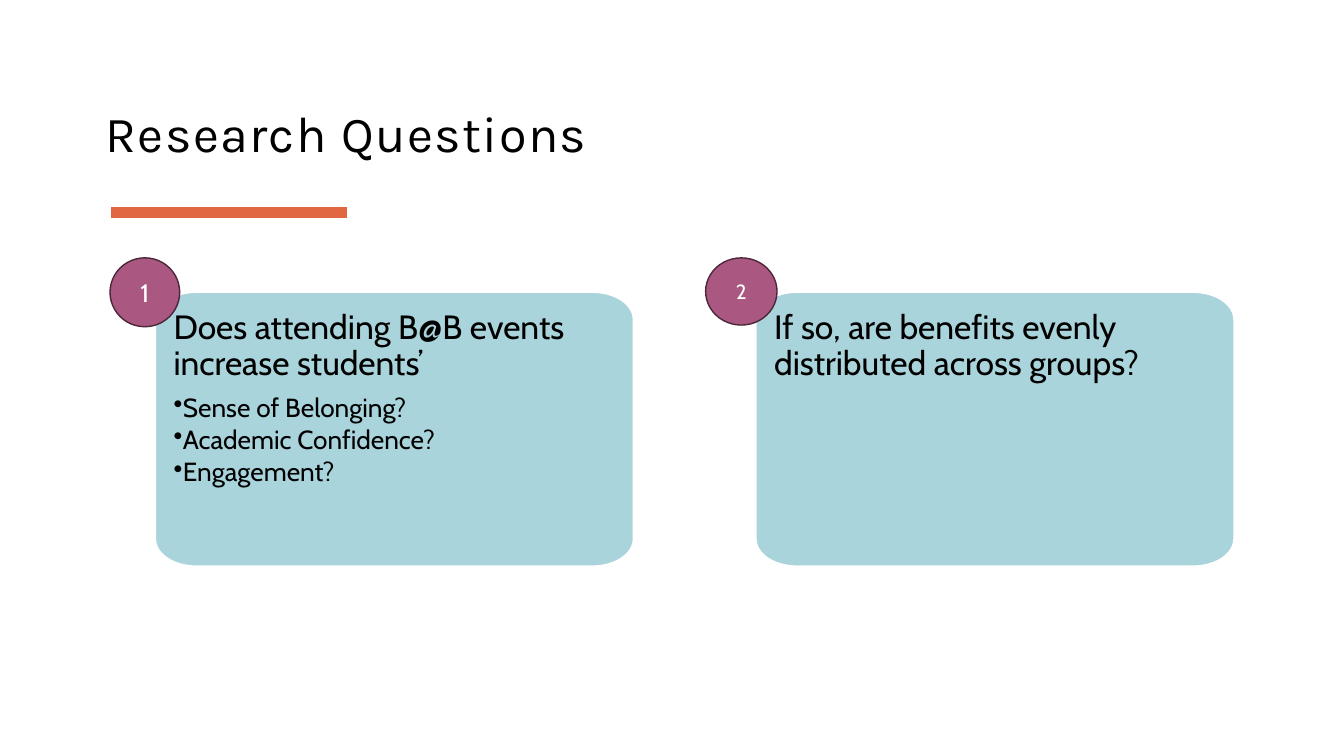
from dataclasses import dataclass
from math import cos, pi, sin

from lxml import etree
from pptx import Presentation
from pptx.dml.color import RGBColor
from pptx.enum.shapes import MSO_SHAPE
from pptx.enum.text import MSO_ANCHOR, MSO_AUTO_SIZE, PP_ALIGN
from pptx.oxml.ns import qn
from pptx.util import Inches, Pt

RECT, OVAL = MSO_SHAPE.RECTANGLE, MSO_SHAPE.OVAL
TOP, MIDDLE, BOTTOM = MSO_ANCHOR.TOP, MSO_ANCHOR.MIDDLE, MSO_ANCHOR.BOTTOM
LEFT, CENTER = PP_ALIGN.LEFT, PP_ALIGN.CENTER
FIXED = MSO_AUTO_SIZE.NONE
COLS, ROWS = 160, 90


@dataclass(frozen=True)
class Theme:
    head: str = "Karla"
    body: str = "Cabin"
    ink: str = "000000"
    paper: str = "FFFFFF"
    card: str = "A9D4DB"
    bar: str = "E06742"
    badge: str = "AA5881"
    rim: str = "4B2739"
    title: float = 36
    lead: float = 24
    item: float = 18.7


class Board:
    """Draws themed elements on one slide, placed by grid columns and rows."""

    def __init__(self, deck, theme):
        self.theme = theme
        self.wide, self.high = deck.slide_width, deck.slide_height
        self.slide = deck.slides.add_slide(deck.slide_layouts[5])

    def place(self, col, row):
        return round(col * self.wide / COLS), round(row * self.high / ROWS)

    def paint(self, shape, fill, line):
        shape.shadow.inherit = False
        shape.fill.solid()
        shape.fill.fore_color.rgb = RGBColor.from_string(fill)
        shape.line.color.rgb = RGBColor.from_string(line)
        shape.line.width = Pt(1)

    def frame(self, shape, anchor, inset=None):
        frame = shape.text_frame
        frame.word_wrap = True
        frame.auto_size = FIXED
        frame.vertical_anchor = anchor
        if inset is not None:
            frame.margin_left = frame.margin_right = Inches(inset)
            frame.margin_top = frame.margin_bottom = Inches(inset)
        return frame

    def label(self, para, text, size, font, color, align=LEFT):
        para.alignment = align
        run = para.add_run()
        run.text = text
        run.font.size = Pt(size)
        run.font.name = font
        run.font.color.rgb = RGBColor.from_string(color)
        return run

    def title(self, text, col, row, cols, rows):
        shape = self.slide.shapes.title
        shape.left, shape.top = self.place(col, row)
        shape.width, shape.height = self.place(cols, rows)
        para = self.frame(shape, BOTTOM, 0).paragraphs[0]
        para.line_spacing = 0.9
        run = self.label(para, text, self.theme.title, self.theme.head, self.theme.ink)
        run._r.get_or_add_rPr().set("spc", "100")

    def block(self, kind, box, fill, line):
        shape = self.slide.shapes.add_shape(
            kind, *self.place(*box[:2]), *self.place(*box[2:]))
        self.paint(shape, fill, line)
        return shape

    def bar(self, *box):
        self.block(RECT, box, self.theme.bar, self.theme.paper)

    def badge(self, text, size, *box):
        shape = self.block(OVAL, box, self.theme.badge, self.theme.rim)
        para = self.frame(shape, MIDDLE).paragraphs[0]
        self.label(para, text, size, self.theme.body, self.theme.paper, CENTER)

    def card(self, lead, items, col, row, cols, rows):
        wide, high, steps = 4.84, 3.24, 12
        hubs = ((col + cols - wide, row + rows - high), (col + wide, row + rows - high),
                (col + wide, row + high), (col + cols - wide, row + high))
        points = []
        for turn, (x, y) in enumerate(hubs):
            for step in range(steps + 1):
                angle = (turn + step / steps) * pi / 2
                points.append(self.place(x + wide * cos(angle), y + high * sin(angle)))
        pen = self.slide.shapes.build_freeform(*points[0])
        pen.add_line_segments(points[1:], close=True)
        shape = pen.convert_to_shape()
        self.paint(shape, self.theme.card, self.theme.paper)
        frame = self.frame(shape, TOP, 0.18)
        self.line(frame.paragraphs[0], lead, self.theme.lead, 0.35)
        for item in items:
            para = frame.add_paragraph()
            self.line(para, item, self.theme.item, 0.15)
            self.bullet(para)

    def line(self, para, text, size, after):
        para.line_spacing = 0.9
        para.space_after = Pt(size * after)
        self.label(para, text, size, self.theme.body, self.theme.ink)

    def bullet(self, para):
        para.level = 1
        props = para._p.get_or_add_pPr()
        props.set("marL", str(Inches(0.08)))
        props.set("indent", str(-Inches(0.08)))
        etree.SubElement(props, qn("a:buChar")).set("char", "•")


def main():
    deck = Presentation()
    deck.slide_width, deck.slide_height = Inches(13.33), Inches(7.5)
    board = Board(deck, Theme())
    board.title("Research Questions", 12.6, 11.5, 117.2, 8)
    goals = ("Sense of Belonging?", "Academic Confidence?", "Engagement?")
    cards = (("Does attending B@B events increase students’", goals, 18.5),
             ("If so, are benefits evenly distributed across groups?", (), 90))
    for lead, items, col in cards:
        board.card(lead, items, col, 34.8, 56.9, 32.6)
    board.bar(13.1, 24.6, 28.3, 1.4)
    board.badge("1", 18, 13.1, 30.7, 8.3, 8.2)
    board.badge("2", 14.7, 84, 30.7, 8.5, 8)
    deck.save("out.pptx")


if __name__ == "__main__":
    main()
